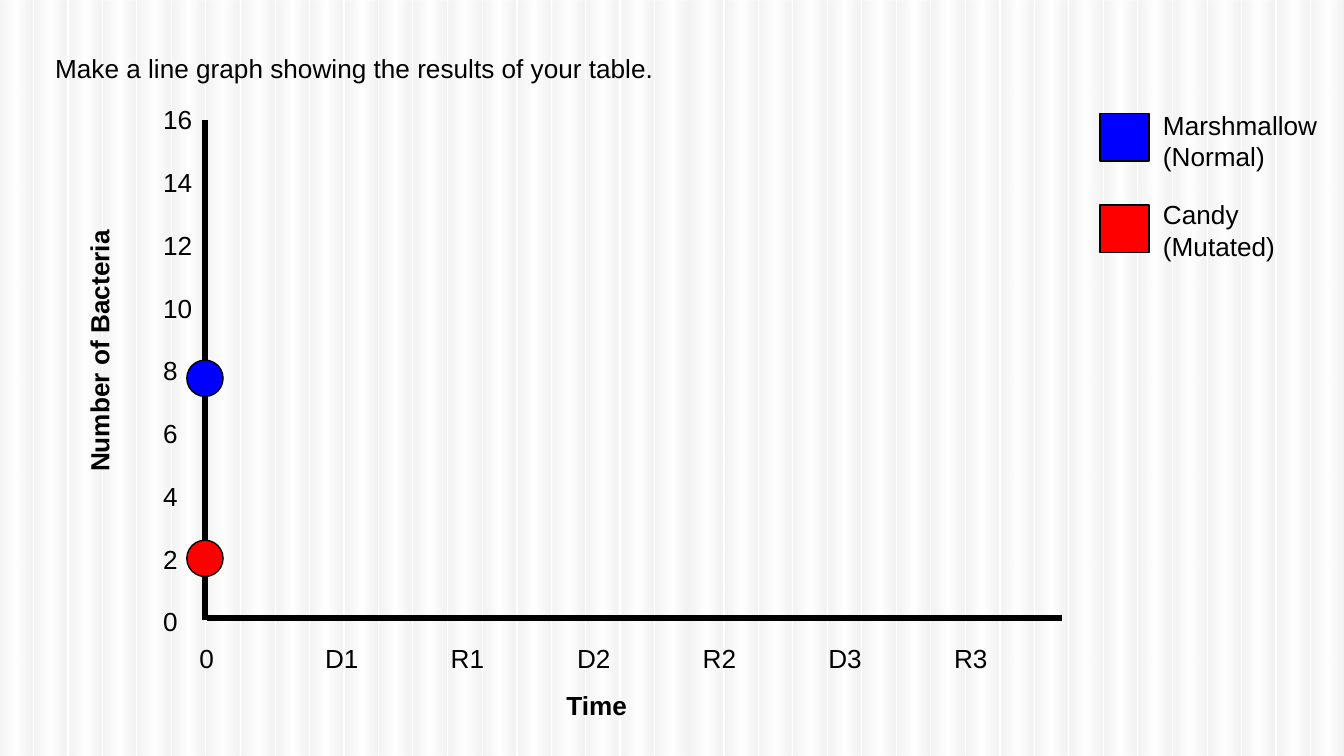
from pptx import Presentation
from pptx.dml.color import RGBColor
from pptx.enum.shapes import MSO_CONNECTOR, MSO_SHAPE
from pptx.enum.text import MSO_ANCHOR, MSO_AUTO_SIZE, PP_ALIGN
from pptx.oxml import parse_xml
from pptx.oxml.ns import nsdecls, qn
from pptx.util import Emu, Pt

BLACK = RGBColor(0x00, 0x00, 0x00)
BLUE = RGBColor(0x00, 0x00, 0xFF)
RED = RGBColor(0xFF, 0x00, 0x00)
WHITE = RGBColor(0xFF, 0xFF, 0xFF)
GRAY = RGBColor(0xBF, 0xBF, 0xBF)

WIDE, HIGH = 2000, 1125
STRIPES = 39


def px(num):
    """Two hundred px make an inch."""
    return Emu(num * 4572)


def place(shape, left, top, wide, high):
    shape.left, shape.top = px(left), px(top)
    shape.width, shape.height = px(wide), px(high)


def write(shape, lines, bold=False, align=PP_ALIGN.LEFT,
          anchor=MSO_ANCHOR.TOP, gap=0):
    """Fill a shape with one paragraph per line, set gap points apart."""
    frame = shape.text_frame
    frame.word_wrap = True
    frame.auto_size = MSO_AUTO_SIZE.NONE
    frame.vertical_anchor = anchor
    frame.margin_left = frame.margin_right = px(20)
    frame.margin_top = frame.margin_bottom = px(20)
    frame.text = "\n".join(lines)
    for i, para in enumerate(frame.paragraphs):
        para.alignment = align
        para.line_spacing = 1.0
        para.space_before = Pt(gap if i else 0)
        font = para.font
        font.name, font.size, font.bold = "Arial", Pt(14), bold
        font.color.rgb = BLACK


def label(slide, box, lines, **style):
    shape = slide.shapes.add_textbox(*map(px, box))
    write(shape, lines, **style)
    return shape


def mark(slide, kind, box, color):
    shape = slide.shapes.add_shape(kind, *map(px, box))
    shape.shadow.inherit = False
    shape.fill.solid()
    shape.fill.fore_color.rgb = color
    shape.line.color.rgb = BLACK
    shape.line.width = Pt(0.75)


def axis(slide, *ends):
    line = slide.shapes.add_connector(MSO_CONNECTOR.STRAIGHT, *map(px, ends))
    line.line.color.rgb = BLACK
    line.line.width = Pt(3)
    line.element.spPr.append(parse_xml(f"<a:effectLst {nsdecls('a')}/>"))


def fade(shape):
    """Give a shape a faint gray, white, gray blend from left to right."""
    stops = "".join(
        f'<a:gs pos="{spot * 1000}"><a:srgbClr val="{color}">'
        '<a:alpha val="19000"/></a:srgbClr></a:gs>'
        for spot, color in ((0, GRAY), (50, WHITE), (97, GRAY), (100, GRAY)))
    blend = parse_xml(
        f"<a:gradFill {nsdecls('a')}><a:gsLst>{stops}</a:gsLst>"
        '<a:lin ang="0" scaled="0"/></a:gradFill>')
    shape.fill.background()
    props = shape.element.spPr
    props.replace(props.find(qn("a:noFill")), blend)


def stripes(slide, master):
    """Draw the stripes, then move them to the back of the master."""
    group = slide.shapes.add_group_shape()
    for i in range(STRIPES):
        left = round(i * 1952 / (STRIPES - 1))
        shape = group.shapes.add_shape(
            MSO_SHAPE.RECTANGLE, *map(px, (left, 1, 48, HIGH - 1)))
        shape.shadow.inherit = False
        shape.line.fill.background()
        fade(shape)
    tree = master.shapes.element
    tree.insert(2, group.element)
    for i, node in enumerate(tree.iter(qn("p:cNvPr")), 1):
        node.set("id", str(i))


def main():
    deck = Presentation()
    deck.slide_width, deck.slide_height = px(WIDE), px(HIGH)
    slide = deck.slides.add_slide(deck.slide_layouts[5])
    master = deck.slide_master
    master.background.fill.solid()
    master.background.fill.fore_color.rgb = WHITE
    stripes(slide, master)

    # Heading
    title = slide.shapes.title
    place(title, 62, 58, 1700, 198)
    write(title, ["Make a line graph showing the results of your table."])

    # Axes
    axis(slide, 305, 179, 305, 922)
    axis(slide, 308, 920, 1580, 920)

    # Legend
    series = (("Marshmallow", "(Normal)", BLUE), ("Candy", "(Mutated)", RED))
    for i, (name, state, color) in enumerate(series):
        mark(slide, MSO_SHAPE.RECTANGLE, (1637, 169 + 136 * i, 73, 71), color)
        label(slide, (1711, 143 + 133 * i, 289, 132), [name, state])

    # Scales
    for i, name in enumerate(("0", "D1", "R1", "D2", "R2", "D3", "R3")):
        label(slide, (277 + round(187.2 * i), 936, 98, 94), [name])
    label(slide, (223, 170, 98, 798), [str(n) for n in range(16, -1, -2)],
          anchor=MSO_ANCHOR.BOTTOM, gap=16.8)

    # Starting points
    for top, color in ((536, BLUE), (804, RED)):
        mark(slide, MSO_SHAPE.OVAL, (278, top, 54, 54), color)

    # Axis titles
    count = label(slide, (-54, 446, 434, 118), ["Number of Bacteria"],
                  bold=True)
    count.rotation = 270
    label(slide, (690, 1006, 396, 118), ["Time"], bold=True,
          align=PP_ALIGN.CENTER)

    deck.save("out.pptx")


if __name__ == "__main__":
    main()
